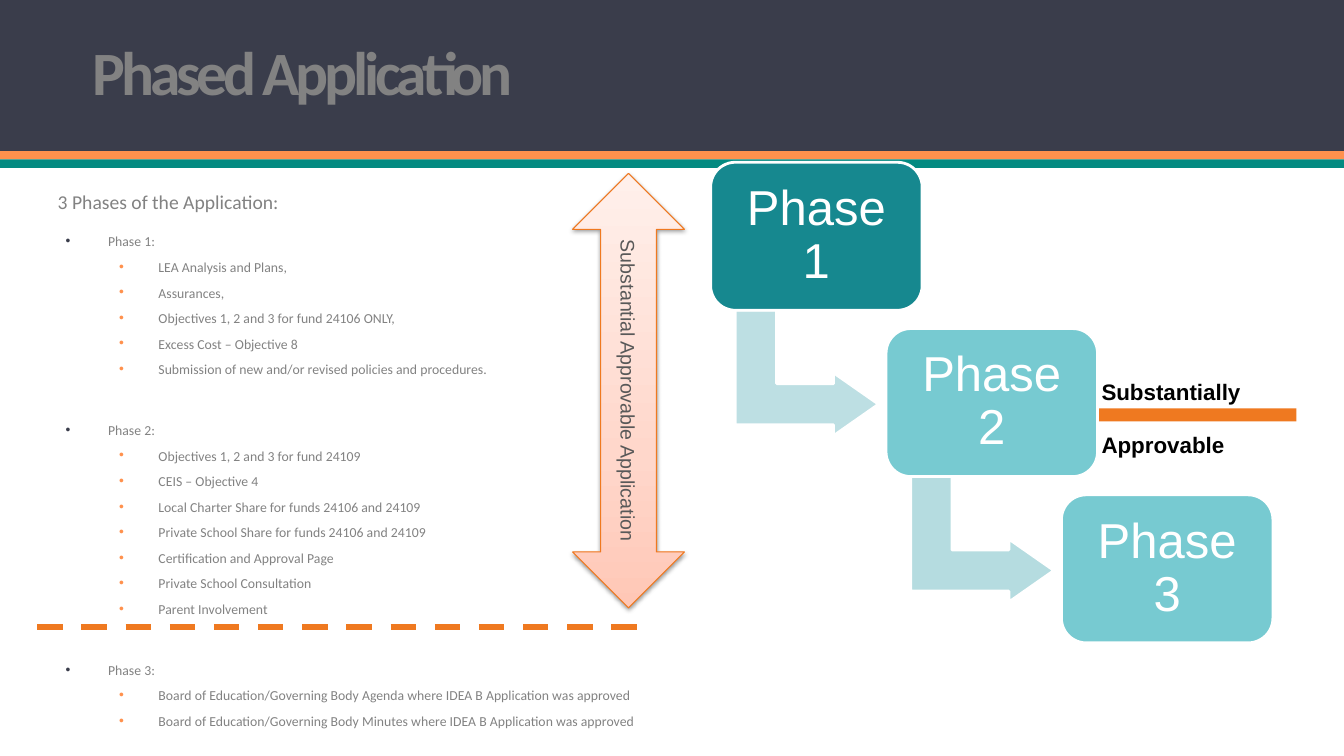
from dataclasses import dataclass

from lxml import etree
from pptx import Presentation
from pptx.dml.color import RGBColor
from pptx.enum import dml, shapes, text
from pptx.oxml import ns
from pptx.util import Cm, Pt


@dataclass(frozen=True)
class Theme:
    navy: str = "3A3D4B"
    orange: str = "FF914D"
    green: str = "048A81"
    accent: str = "EF7920"
    grey: str = "828282"
    dark_grey: str = "595959"
    black: str = "000000"
    white: str = "FFFFFF"
    blush: tuple = (("FFC7B6", 0), ("FFD7CB", 35), ("FFF0EB", 100))
    steps: tuple = ("16888F", "77CAD1", "77CAD1")
    turns: tuple = ("BDDFE3", "B5DCE0")
    heading_font: str = "Calibri"
    diagram_font: str = "Arial"
    title_size: float = 44
    step_size: float = 35
    caption_size: float = 16
    intro_size: float = 14
    list_size: float = 9.8


@dataclass(frozen=True)
class Box:
    """A region in centimetres."""
    left: float
    top: float
    width: float
    height: float

    def lengths(self):
        return Cm(self.left), Cm(self.top), Cm(self.width), Cm(self.height)


THEME = Theme()
PHASES = {
    "Phase 1:": [
        "LEA Analysis and Plans,",
        "Assurances,",
        "Objectives 1, 2 and 3 for fund 24106 ONLY,",
        "Excess Cost – Objective 8",
        "Submission of new and/or revised policies and procedures.",
    ],
    "Phase 2:": [
        "Objectives 1, 2 and 3 for fund 24109",
        "CEIS – Objective 4",
        "Local Charter Share for funds 24106 and 24109",
        "Private School Share for funds 24106 and 24109",
        "Certification and Approval Page",
        "Private School Consultation",
        "Parent Involvement",
    ],
    "Phase 3:": [
        "Board of Education/Governing Body Agenda where IDEA B Application was approved",
        "Board of Education/Governing Body Minutes where IDEA B Application was approved",
    ],
}


def rgb(color):
    return RGBColor.from_string(color)


def add_element(parent, tag, **attributes):
    return etree.SubElement(parent, ns.qn(tag), attributes)


def style_font(paragraph, face, size, color, bold=False):
    font = paragraph.font
    font.name, font.size, font.bold = face, Pt(size), bold
    font.color.rgb = rgb(color)


def place(placeholder, box):
    placeholder.left, placeholder.top, placeholder.width, placeholder.height = box.lengths()


def set_insets(frame, inset):
    frame.margin_left = frame.margin_right = Cm(inset)
    frame.margin_top = frame.margin_bottom = Cm(inset)


def add_filled(slide, kind, box, fill, outline=None):
    shape = slide.shapes.add_shape(kind, *box.lengths())
    shape.shadow.inherit = False
    shape.fill.solid()
    shape.fill.fore_color.rgb = rgb(fill)
    if outline:
        shape.line.color.rgb = rgb(outline)
        shape.line.width = Pt(2)
    else:
        shape.line.fill.background()
    return shape


def add_header(slide, box):
    # Bands go behind the placeholders
    stripe = 0.21
    bands = ((0, box.height, THEME.navy), (box.height, stripe, THEME.orange),
             (box.height + stripe, stripe, THEME.green))
    for order, (offset, height, color) in enumerate(bands):
        band = add_filled(slide, shapes.MSO_SHAPE.RECTANGLE,
                          Box(box.left, box.top + offset, box.width, height), color)
        slide.shapes._spTree.insert(2 + order, band._element)

    # Title
    title = slide.shapes.title
    place(title, Box(box.left + 1.83, box.top + 0.51, 27.56, 2.74))
    frame = title.text_frame
    frame.text = "Phased Application"
    frame.auto_size = text.MSO_AUTO_SIZE.NONE
    frame.vertical_anchor = text.MSO_ANCHOR.BOTTOM
    set_insets(frame, 0.51)
    heading = frame.paragraphs[0]
    heading.alignment = text.PP_ALIGN.LEFT
    heading.line_spacing = 0.9
    style_font(heading, THEME.heading_font, THEME.title_size, THEME.grey, bold=True)
    heading.runs[0]._r.get_or_add_rPr().set("spc", "-300")


def add_list_line(frame, wording, size, before, margin=0, hanging=0, bullet=None, level=0):
    line = frame.paragraphs[0] if not frame.text else frame.add_paragraph()
    line.text, line.level = wording, level
    line.alignment = text.PP_ALIGN.LEFT
    line.line_spacing, line.space_before = 0.7, Pt(before)
    properties = line._p.get_or_add_pPr()
    properties.set("marL", str(Cm(margin)))
    properties.set("indent", str(-Cm(hanging)))
    if bullet:
        add_element(add_element(properties, "a:buClr"), "a:srgbClr", val=bullet)
        add_element(properties, "a:buChar", char="•")
    else:
        add_element(properties, "a:buNone")
    style_font(line, THEME.heading_font, size, THEME.grey)


def add_phase_list(slide, box):
    body = slide.placeholders[1]
    place(body, box)
    frame = body.text_frame
    frame.auto_size = text.MSO_AUTO_SIZE.NONE
    frame.vertical_anchor = text.MSO_ANCHOR.TOP
    frame.margin_top = Cm(0.57)
    add_list_line(frame, "3 Phases of the Application:", THEME.intro_size, 18)
    for order, (phase, tasks) in enumerate(PHASES.items()):
        add_list_line(frame, phase, THEME.list_size, 35.2 if order else 18,
                      1.27, 1.07, THEME.navy)
        for task in tasks:
            add_list_line(frame, task, THEME.list_size, 10, 2.54, 0.99, THEME.orange, level=1)


def add_divider(slide, box):
    divider = slide.shapes.add_connector(
        shapes.MSO_CONNECTOR.STRAIGHT, Cm(box.left), Cm(box.top),
        Cm(box.left + box.width), Cm(box.top + box.height))
    divider.line.color.rgb = rgb(THEME.accent)
    divider.line.width = Pt(4.5)
    divider.line.dash_style = dml.MSO_LINE.DASH
    add_element(divider._element.spPr, "a:effectLst")


def add_span_arrow(slide, box):
    arrow = add_filled(slide, shapes.MSO_SHAPE.UP_DOWN_ARROW, box, THEME.white, THEME.accent)
    arrow.line.width = Pt(0.75)

    # Three-stop gradient, darkest at the bottom
    arrow.fill.gradient()
    arrow.fill.gradient_angle = 90
    stops = arrow._element.spPr.find(".//" + ns.qn("a:gsLst"))
    for stop in list(stops):
        stops.remove(stop)
    for color, percent in THEME.blush:
        stop = add_element(stops, "a:gs", pos=str(percent * 1000))
        add_element(stop, "a:srgbClr", val=color)

    # Soft shadow below
    effects = arrow._element.spPr.find(ns.qn("a:effectLst"))
    shadow = add_element(effects, "a:outerShdw", blurRad=str(Pt(3.1)), dist=str(Pt(1.6)),
                         dir="5400000", rotWithShape="0")
    add_element(add_element(shadow, "a:srgbClr", val=THEME.black), "a:alpha", val="38000")

    # Vertical label
    frame = arrow.text_frame
    frame.text = "Substantial Approvable Application"
    frame.vertical_anchor = text.MSO_ANCHOR.MIDDLE
    frame._txBody.bodyPr.set("vert", "vert")
    label = frame.paragraphs[0]
    label.alignment = text.PP_ALIGN.CENTER
    style_font(label, THEME.diagram_font, THEME.intro_size, THEME.dark_grey)


def add_approval_mark(slide, box):
    add_filled(slide, shapes.MSO_SHAPE.RECTANGLE,
               Box(box.left - 1.55, box.top + 0.89, 6.71, 0.33), THEME.accent)
    frame = slide.shapes.add_textbox(*box.lengths()).text_frame
    frame.word_wrap = True
    frame.text = "Substantially\nApprovable"
    for line in frame.paragraphs:
        style_font(line, THEME.diagram_font, THEME.caption_size, THEME.black, bold=True)
    frame.paragraphs[1].space_before = Pt(19)


def add_steps(slide, box):
    width, height = 5.33, 3.73
    count = len(THEME.steps)
    across = (box.width - width) / (count - 1)
    down = (box.height - height) / (count - 1)
    for order, color in enumerate(THEME.steps):
        left, top = box.left + order * across, box.top + order * down
        # Turn towards the next step
        if order < len(THEME.turns):
            turn = add_filled(slide, shapes.MSO_SHAPE.BENT_UP_ARROW,
                              Box(left + 0.84, top + 3.5, 3.17, 3.61),
                              THEME.turns[order], THEME.white)
            turn.rotation = 90
            for index, ratio in enumerate((0.328, 0.25, 0.358)):
                turn.adjustments[index] = ratio
        # Step
        step = add_filled(slide, shapes.MSO_SHAPE.ROUNDED_RECTANGLE,
                          Box(left, top, width, height), color, THEME.white)
        frame = step.text_frame
        frame.text = f"Phase {order + 1}"
        frame.word_wrap = True
        frame.vertical_anchor = text.MSO_ANCHOR.MIDDLE
        set_insets(frame, 0.38)
        label = frame.paragraphs[0]
        label.alignment, label.line_spacing = text.PP_ALIGN.CENTER, 0.9
        style_font(label, THEME.diagram_font, THEME.step_size, THEME.white)


def main():
    deck = Presentation()
    deck.slide_width, deck.slide_height = Cm(33.87), Cm(19.05)
    slide = deck.slides.add_slide(deck.slide_layouts[1])
    add_header(slide, Box(0, 0, 33.87, 3.81))
    add_phase_list(slide, Box(1.2, 4.37, 17.65, 14.53))
    add_divider(slide, Box(0.94, 15.8, 15.16, 0))
    add_span_arrow(slide, Box(14.43, 4.37, 2.82, 10.95))
    add_approval_mark(slide, Box(27.51, 9.4, 5.21, 2.31))
    add_steps(slide, Box(17.91, 4.09, 14.17, 12.11))
    deck.save("out.pptx")


if __name__ == "__main__":
    main()
